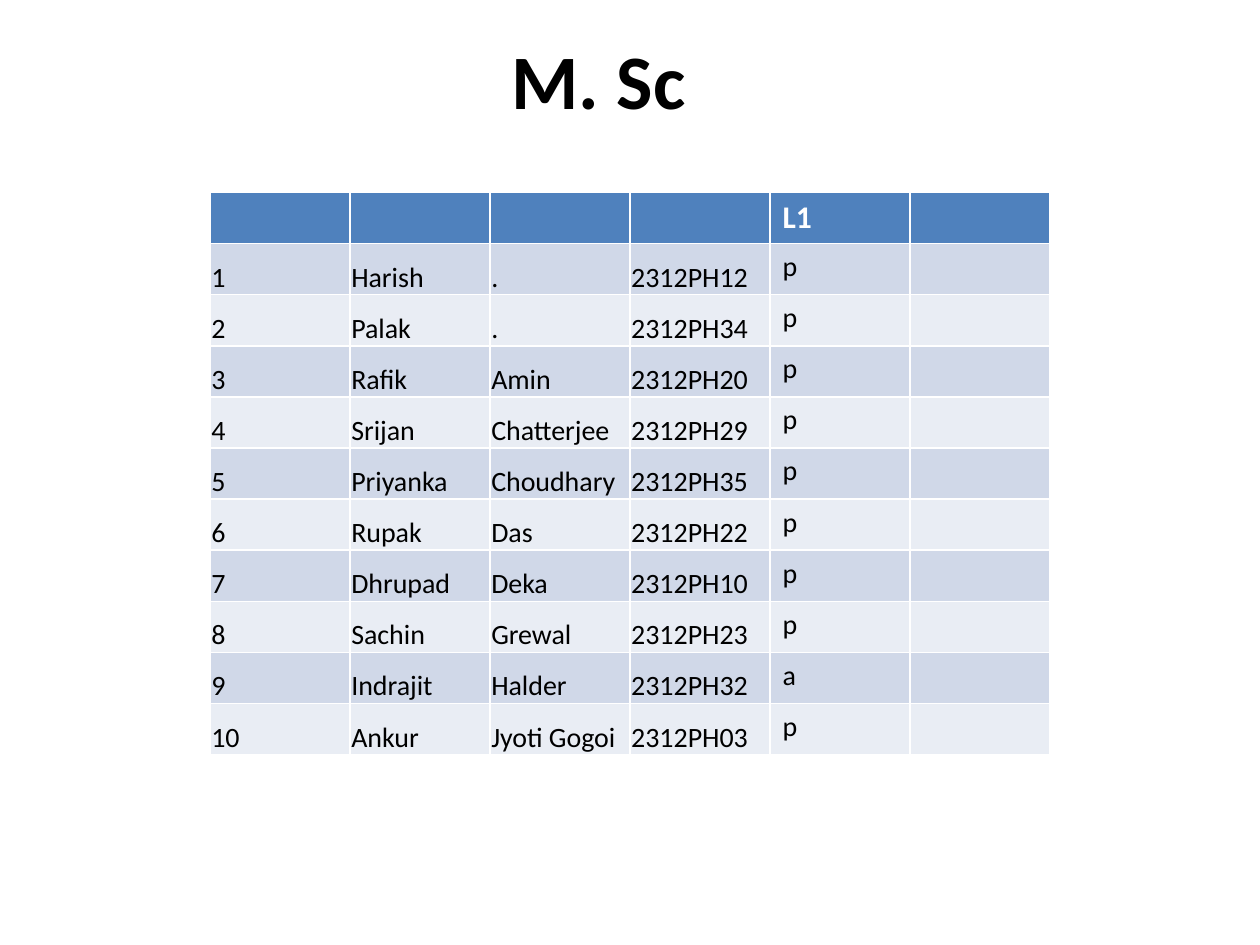
from pptx import Presentation
from pptx.dml.color import RGBColor
from pptx.enum.text import MSO_ANCHOR, PP_ALIGN
from pptx.util import Pt

BLACK = RGBColor(0x00, 0x00, 0x00)
WHITE = RGBColor(0xFF, 0xFF, 0xFF)
HEADER_BLUE = RGBColor(0x4F, 0x81, 0xBD)
BAND_DARK = RGBColor(0xD0, 0xD8, 0xE8)
BAND_LIGHT = RGBColor(0xE9, 0xED, 0xF4)

HEADER = ("", "", "", "", "L1", "")
STUDENTS = [
    ("Harish", ".", "2312PH12", "p"),
    ("Palak", ".", "2312PH34", "p"),
    ("Rafik", "Amin", "2312PH20", "p"),
    ("Srijan", "Chatterjee", "2312PH29", "p"),
    ("Priyanka", "Choudhary", "2312PH35", "p"),
    ("Rupak", "Das", "2312PH22", "p"),
    ("Dhrupad", "Deka", "2312PH10", "p"),
    ("Sachin", "Grewal", "2312PH23", "p"),
    ("Indrajit", "Halder", "2312PH32", "a"),
    ("Ankur", "Jyoti Gogoi", "2312PH03", "p"),
]
DETAIL_COLUMNS = 4  # number, names and roll number sit tight at the cell bottom


class AttendanceSlide:
    font = "Calibri"

    def __init__(self, deck):
        self.slide = deck.slides.add_slide(deck.slide_layouts[6])

    def add_span(self, para, text, size, color, bold=False):
        span = para.add_run()
        span.text = text
        span.font.name = self.font
        span.font.size = Pt(size)
        span.font.bold = bold
        span.font.color.rgb = color

    def title(self, text, left, top, width, height):
        box = self.slide.shapes.add_textbox(Pt(left), Pt(top), Pt(width), Pt(height))
        frame = box.text_frame
        frame.word_wrap = True
        frame.vertical_anchor = MSO_ANCHOR.MIDDLE
        para = frame.paragraphs[0]
        para.alignment = PP_ALIGN.CENTER
        self.add_span(para, text, 44, BLACK, bold=True)

    def table(self, rows, left, top, width, row_height):
        """Draw the rows; the default table style supplies the white borders."""
        table = self.slide.shapes.add_table(
            len(rows), len(rows[0]), Pt(left), Pt(top),
            Pt(width), Pt(row_height * len(rows))).table
        for row_index, row in enumerate(rows):
            for column_index, text in enumerate(row):
                cell = table.cell(row_index, column_index)
                self.fill_cell(cell, text, row_index, column_index)

    def fill_cell(self, cell, text, row_index, column_index):
        is_header = row_index == 0
        cell.fill.solid()
        if is_header:
            cell.fill.fore_color.rgb = HEADER_BLUE
        else:
            cell.fill.fore_color.rgb = BAND_DARK if row_index % 2 else BAND_LIGHT
            if column_index < DETAIL_COLUMNS:
                cell.vertical_anchor = MSO_ANCHOR.BOTTOM
                cell.margin_left = cell.margin_right = cell.margin_top = Pt(0.75)
                cell.margin_bottom = Pt(0)
        if text:
            size, color = (18, WHITE) if is_header else (16, BLACK)
            self.add_span(cell.text_frame.paragraphs[0], text, size, color, is_header)


def main():
    deck = Presentation()
    deck.slide_width, deck.slide_height = Pt(720), Pt(540)
    page = AttendanceSlide(deck)
    page.title("M. Sc", 18, 0, 648, 90)
    rows = [HEADER] + [
        (str(number), *student, "") for number, student in enumerate(STUDENTS, 1)]
    page.table(rows, left=120, top=110, width=480, row_height=29.2)
    deck.save("out.pptx")


if __name__ == "__main__":
    main()
